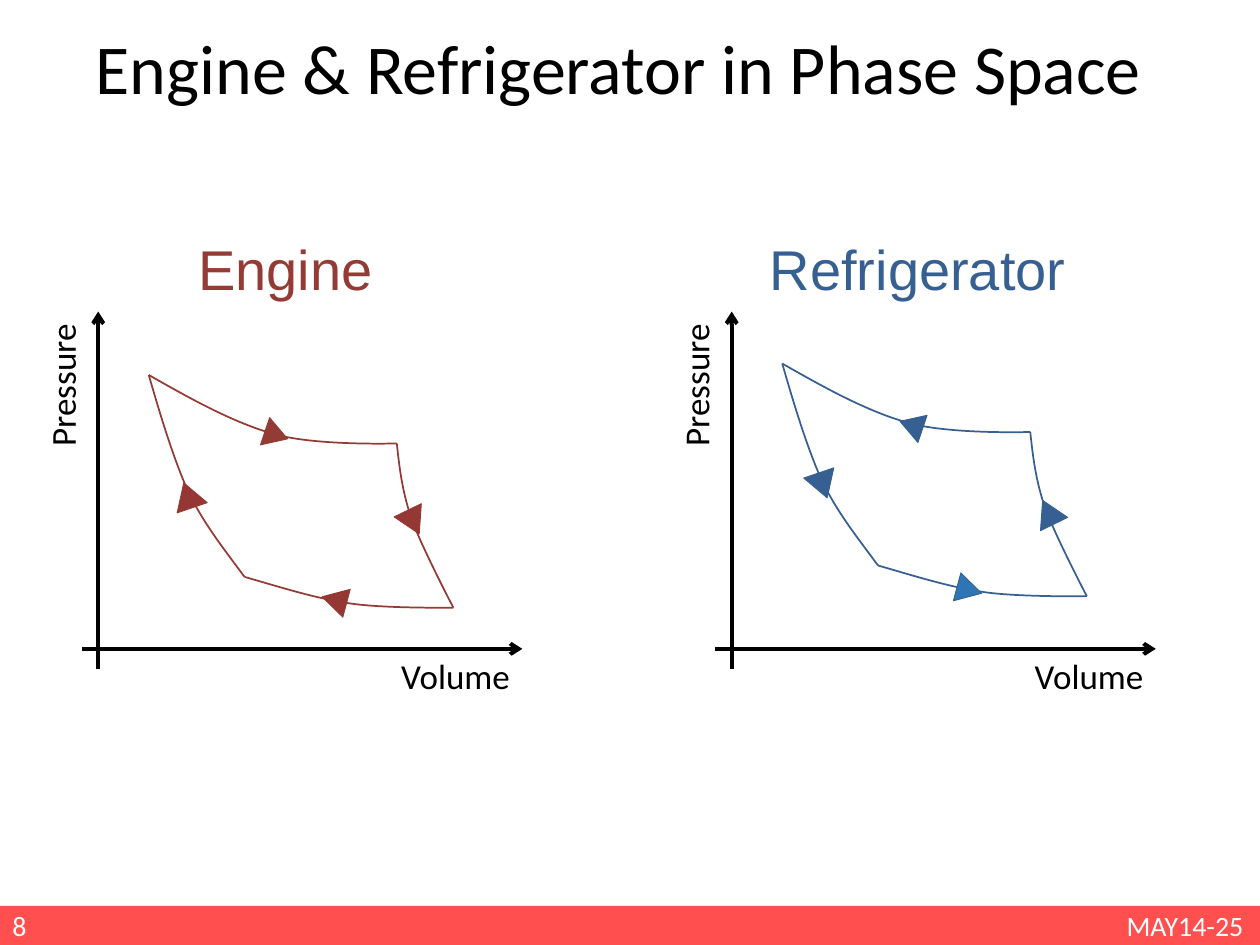
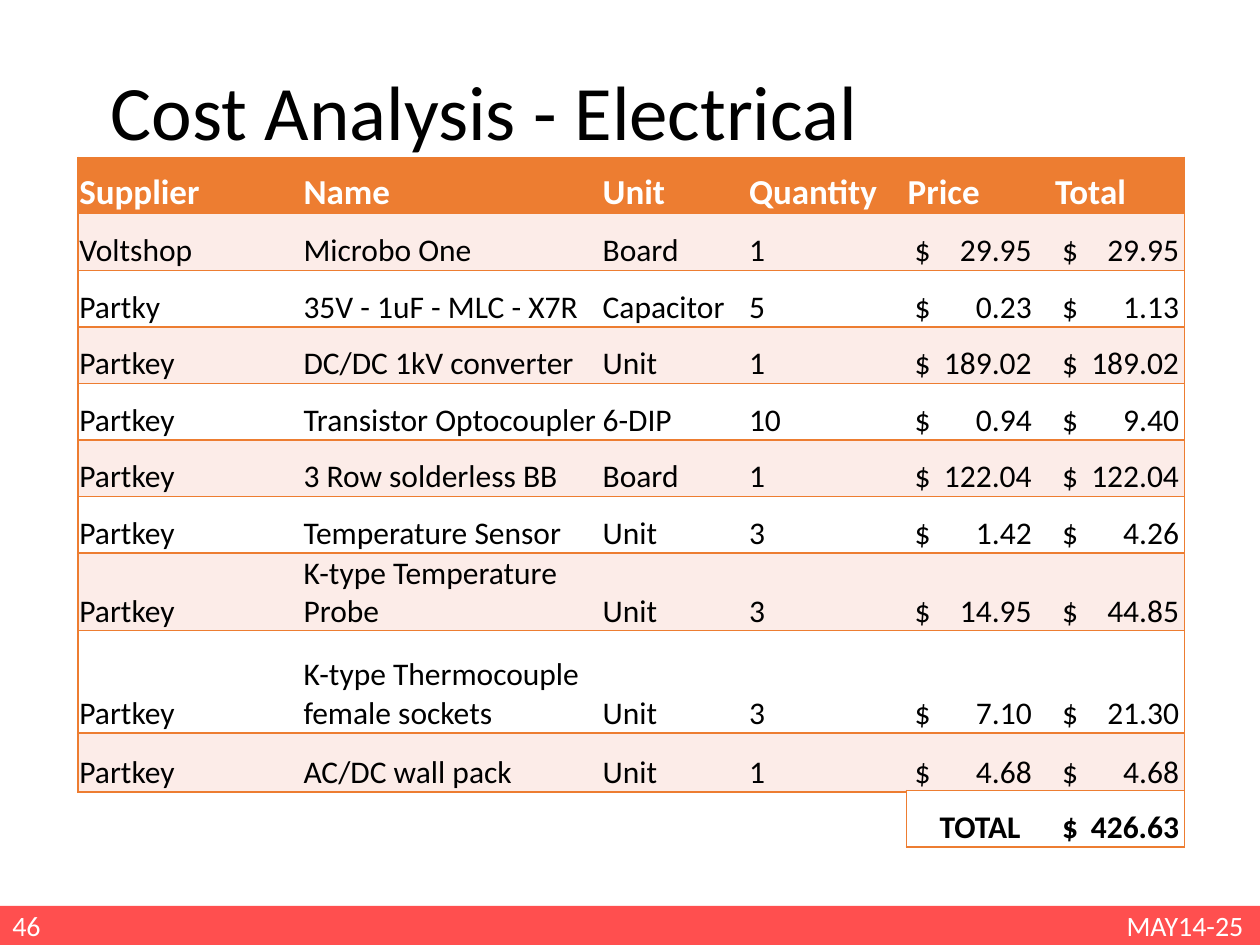
import pptx
import pptx.util
import pptx.dml.color
import pptx.enum.shapes
import pptx.enum.text
import pptx.oxml.ns
import lxml.etree

Cm, Pt = pptx.util.Cm, pptx.util.Pt
RGB = pptx.dml.color.RGBColor.from_string
SHAPE = pptx.enum.shapes.MSO_SHAPE
ALIGN = pptx.enum.text.PP_ALIGN
ANCHOR = pptx.enum.text.MSO_ANCHOR
qn = pptx.oxml.ns.qn

HUES = {
    "black": "000000", "white": "FFFFFF", "band": "FF4F4F",
    "red": "953B35", "brick": "953735", "blue": "376092", "sky": "2E75B6",
    "orange": "ED7D31", "blush": "FCECE8",
}


def write(para, text, size, hue, bold=False, font="Calibri"):
    run = para.add_run()
    run.text = text
    run.font.size, run.font.bold, run.font.name = Pt(size), bold, font
    run.font.color.rgb = RGB(HUES[hue])


def label(slide, place, text, size, hue, align=ALIGN.LEFT,
          anchor=ANCHOR.TOP, font="Calibri"):
    """Add a one-line text box; place is left, top, width, height in cm."""
    area = slide.shapes.add_textbox(*map(Cm, place))
    frame = area.text_frame
    frame.word_wrap, frame.vertical_anchor = True, anchor
    frame.paragraphs[0].alignment = align
    write(frame.paragraphs[0], text, size, hue, font=font)
    return area


deck = pptx.Presentation()
deck.slide_width, deck.slide_height = Cm(25.4), Cm(19.05)

# Footer band, team code and page number on each slide
for page in ("8", "46"):
    slide = deck.slides.add_slide(deck.slide_layouts[6])
    band = slide.shapes.add_shape(SHAPE.RECTANGLE, 0, Cm(18.26), Cm(25.4), Cm(0.79))
    band.shadow.inherit = False
    band.fill.solid()
    band.fill.fore_color.rgb = RGB(HUES["band"])
    band.line.fill.background()
    label(slide, (22.38, 18.26, 3.02, 0.79), "MAY14-25", 16, "white",
          ALIGN.CENTER, ANCHOR.MIDDLE)
    label(slide, (0, 18.26, 1.22, 0.79), page, 16, "white", anchor=ANCHOR.MIDDLE)
phase, cost = deck.slides

# Phase space: the same cycle twice, run in opposite directions
label(phase, (1.68, 0.36, 21.89, 4.7), "Engine & Refrigerator in Phase Space", 40, "black")

axes = [(1.98, 13.49, 1.98, 6.28), (1.65, 13.08, 10.53, 13.08)]
# Each curve is two cubic Bezier arcs that share their middle point
curves = [
    [(3, 7.56), (3.86, 8.05), (4.72, 8.53), (5.56, 8.76),
     (6.4, 8.99), (8, 8.94), (8, 8.94)],
    [(8, 8.94), (8.05, 9.4), (8.1, 9.86), (8.28, 10.41),
     (8.46, 10.95), (9.14, 12.25), (9.14, 12.25)],
    [(4.93, 11.63), (5.66, 11.84), (6.38, 12.07), (7.09, 12.17),
     (7.8, 12.27), (9.14, 12.25), (9.14, 12.25)],
    [(4.93, 11.63), (4.52, 11.07), (4.11, 10.57), (3.78, 9.88),
     (3.48, 9.19), (3.23, 8.36), (3, 7.56)],
]
heads = [
    (5.28, 8.53, 0.58, 0.48, 108.6),
    (8.03, 10.26, 0.61, 0.53, 154.1),
    (6.45, 11.84, 0.58, 0.51, 284.8),
    (3.47, 9.72, 0.64, 0.53, 341.3),
]
# name, left and width of name, hue, head fills,
# shift of axes and curves, shift of heads, turn of heads
cycles = [
    ("Engine", 3.75, 4.29, "red", ("red", "brick", "brick", "brick"),
     (0, 0), (0, 0), 0),
    ("Refrigerator", 15.27, 6.83, "blue", ("blue", "blue", "sky", "blue"),
     (12.77, -0.23), (12.8, -0.2), 180),
]
for name, left, width, hue, fills, (dx, dy), (hx, hy), turn in cycles:
    label(phase, (left, 4.6, width, 1.63), name, 32, hue, font="Arial")

    for x1, y1, x2, y2 in axes:
        axis = phase.shapes.add_connector(
            pptx.enum.shapes.MSO_CONNECTOR.STRAIGHT,
            Cm(x1 + dx), Cm(y1), Cm(x2 + dx), Cm(y2))
        axis.line.color.rgb = RGB(HUES["black"])
        axis.line.width = Pt(2.25)
        props = axis.element.spPr
        lxml.etree.SubElement(props.find(qn("a:ln")), qn("a:tailEnd"), type="arrow")
        lxml.etree.SubElement(props, qn("a:effectLst"))

    for knots in curves:
        start, *rest = [(Cm(x + dx), Cm(y + dy)) for x, y in knots]
        pen = phase.shapes.build_freeform(*start)
        pen.add_line_segments(rest, close=False)
        curve = pen.convert_to_shape()
        curve.shadow.inherit = False
        curve.fill.background()
        curve.line.color.rgb = RGB(HUES[hue])
        curve.line.width = Pt(1)
        # Turn each three straight segments into one Bezier arc
        track = next(curve.element.iter(qn("a:path")))
        legs = track.findall(qn("a:lnTo"))
        for n in (0, 3):
            arc = lxml.etree.SubElement(track, qn("a:cubicBezTo"))
            for leg in legs[n:n + 3]:
                arc.append(leg[0])
                track.remove(leg)

    for (x, y, w, h, angle), fill in zip(heads, fills):
        head = phase.shapes.add_shape(SHAPE.ISOSCELES_TRIANGLE,
                                      Cm(x + hx), Cm(y + hy), Cm(w), Cm(h))
        head.rotation = (angle + turn) % 360
        head.shadow.inherit = False
        head.fill.solid()
        head.fill.fore_color.rgb = RGB(HUES[fill])
        head.line.color.rgb = RGB(HUES[hue])
        head.line.width = Pt(0.5)

    area = label(phase, (0.7 + dx, 6.29, 1.37, 3.07), "Pressure", 20, "black", ALIGN.RIGHT)
    area.element.txBody.bodyPr.set("vert", "vert270")
    label(phase, (7.61 + dx, 13.06, 2.92, 1.12), "Volume", 20, "black", ALIGN.RIGHT)

# Cost table with its total below the last two columns
title = label(cost, (1.98, 0.5, 21.89, 3.68), "Cost Analysis - Electrical", 44, "black",
              anchor=ANCHOR.MIDDLE)
title.text_frame.paragraphs[0].line_spacing = 0.9

parts = [
    ("Supplier", "Name", "Unit", "Quantity", "Price", "Total"),
    ("Voltshop", "Microbo One", "Board", "1", "$\t29.95", "$\t29.95"),
    ("Partky", "35V - 1uF - MLC - X7R", "Capacitor", "5", "$\t0.23", "$\t1.13"),
    ("Partkey", "DC/DC 1kV converter", "Unit", "1", "$\t189.02", "$\t189.02"),
    ("Partkey", "Transistor Optocoupler", "6-DIP", "10", "$\t0.94", "$\t9.40"),
    ("Partkey", "3 Row solderless BB", "Board", "1", "$\t122.04", "$\t122.04"),
    ("Partkey", "Temperature Sensor", "Unit", "3", "$\t1.42", "$\t4.26"),
    ("Partkey", "K-type Temperature Probe", "Unit", "3", "$\t14.95", "$\t44.85"),
    ("Partkey", "K-type Thermocouple female sockets", "Unit", "3", "$\t7.10", "$\t21.30"),
    ("Partkey", "AC/DC wall pack", "Unit", "1", "$\t4.68", "$\t4.68"),
]
PLAIN = "{2D5ABB26-0587-4C30-8999-92F81FD0307C}"  # table style without grid
widths = [4.52, 6.03, 2.95, 3.2, 2.97, 2.64]
tall = [1.14] * 7 + [1.57, 2.06, 1.19]
left = 1.57
grids = [
    (parts, left, 3.17, widths, tall),
    ([("TOTAL", "$\t426.63")], left + sum(widths[:4]), 15.94, widths[4:], [1.14]),
]
for rows, x, y, wide, high in grids:
    grid = cost.shapes.add_table(len(rows), len(wide), Cm(x), Cm(y),
                                 Cm(sum(wide)), Cm(sum(high))).table
    grid.first_row = grid.horz_banding = False
    next(grid._tbl.iter(qn("a:tableStyleId"))).text = PLAIN
    for col, size in zip(grid.columns, wide):
        col.width = Cm(size)
    for row, size in zip(grid.rows, high):
        row.height = Cm(size)

    for r, row in enumerate(rows):
        first = rows is parts and r == 0
        bold = first or rows is not parts
        fill = "orange" if first else "blush" if r % 2 else "white"
        for c, text in enumerate(row):
            cell = grid.cell(r, c)
            money = text.startswith("$")
            cell.margin_left = Cm(0.17 if money else 0.03)
            cell.margin_right = cell.margin_top = Cm(0.03)
            cell.margin_bottom = 0
            cell.vertical_anchor = ANCHOR.BOTTOM
            cell.fill.solid()
            cell.fill.fore_color.rgb = RGB(HUES[fill])
            para = cell.text_frame.paragraphs[0]
            para.alignment = ALIGN.CENTER if text == "TOTAL" else ALIGN.LEFT
            write(para, text, 20 if first else 18, "white" if first else "black", bold)
            if money:
                tabs = lxml.etree.SubElement(para._p.get_or_add_pPr(), qn("a:tabLst"))
                lxml.etree.SubElement(tabs, qn("a:tab"), pos=str(Cm(2.36)), algn="r")

            props = cell._tc.get_or_add_tcPr()
            sides = {"lnL": c == 0, "lnR": c == len(row) - 1, "lnT": True, "lnB": True}
            for spot, (side, drawn) in enumerate(sides.items()):
                edge = lxml.etree.Element(qn("a:" + side), w=str(Pt(1)))
                paint = lxml.etree.SubElement(edge, qn("a:solidFill" if drawn else "a:noFill"))
                if drawn:
                    lxml.etree.SubElement(paint, qn("a:srgbClr"), val=HUES["orange"])
                props.insert(spot, edge)

deck.save("out.pptx")
